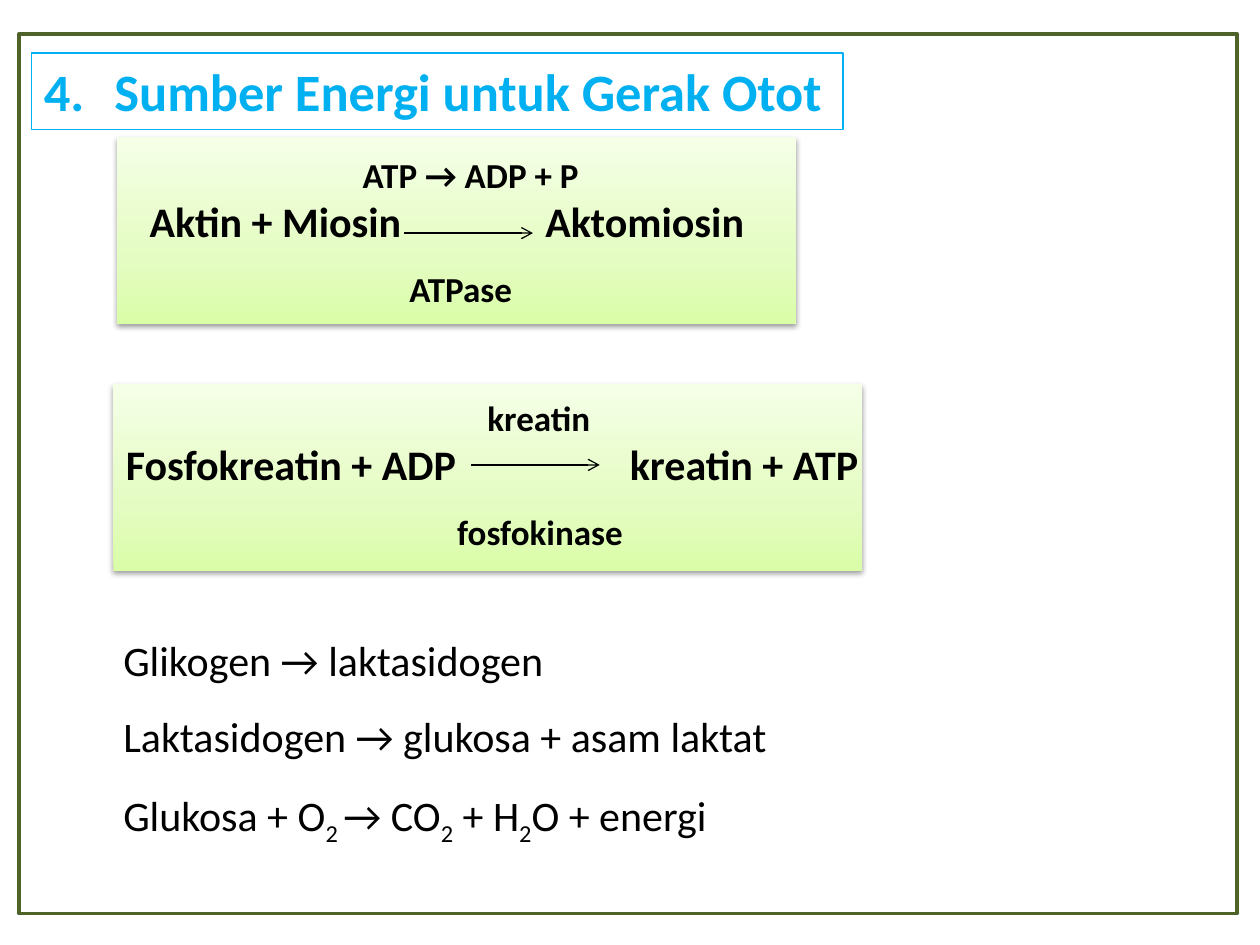
from pptx import Presentation
from pptx.dml.color import RGBColor
from pptx.enum.shapes import MSO_CONNECTOR as Connector, MSO_SHAPE as Shape
from pptx.enum.text import MSO_ANCHOR as Anchor, MSO_AUTO_SIZE as AutoSize, PP_ALIGN as Align
from pptx.oxml import parse_xml
from pptx.oxml.ns import nsdecls
from pptx.oxml.xmlchemy import OxmlElement
from pptx.util import Inches, Pt

FONT = "Calibri"
BLACK = RGBColor(0x00, 0x00, 0x00)
SKY = RGBColor(0x00, 0xB0, 0xF0)
OLIVE = RGBColor(0x4F, 0x62, 0x28)
LIME = RGBColor(0xDA, 0xFD, 0xA7)
PALE_LIME = RGBColor(0xE4, 0xFC, 0xC2)
MIST = RGBColor(0xF5, 0xFF, 0xE7)
PANEL_STOPS = [(0, LIME), (35, PALE_LIME), (100, MIST)]


def inches(*lengths):
    """Convert several numbers to lengths."""
    return [Inches(length) for length in lengths]


def add_element(parent, tag, **attributes):
    """Append a DrawingML element with the given attributes."""
    child = OxmlElement(tag)
    for name, value in attributes.items():
        child.set(name, str(value))
    parent.append(child)
    return child


def add_span(para, text, size=24, color=BLACK, bold=False, baseline=0):
    """Add formatted text to a paragraph."""
    span = para.add_run()
    span.text = text
    span.font.name = FONT
    span.font.size = Pt(size)
    span.font.bold = bold
    span.font.color.rgb = color
    if baseline:
        span.font._element.set("baseline", str(baseline * 1000))


def add_outline(shapes, box, color, width):
    """Add an unfilled rectangle with a coloured line."""
    outline = shapes.add_shape(Shape.RECTANGLE, *inches(*box))
    outline.shadow.inherit = False
    outline.fill.background()
    outline.line.color.rgb = color
    outline.line.width = Pt(width)
    return outline


def add_text_box(shapes, box):
    """Add an empty wrapping text box and return its frame."""
    frame = shapes.add_textbox(*inches(*box)).text_frame
    frame.word_wrap = True
    frame.auto_size = AutoSize.SHAPE_TO_FIT_TEXT
    return frame


def add_heading(shapes, box, text, number):
    """Add the numbered heading in its thin outline."""
    frame = add_outline(shapes, box, SKY, 0.75).text_frame
    frame.word_wrap = False
    frame.auto_size = AutoSize.SHAPE_TO_FIT_TEXT
    frame.vertical_anchor = Anchor.TOP
    para = frame.paragraphs[0]
    para.alignment = Align.LEFT
    properties = para._p.get_or_add_pPr()
    properties.set("marL", str(Inches(0.56)))
    properties.set("indent", str(-Inches(0.56)))
    add_element(properties, "a:buFont", typeface="+mj-lt")
    add_element(properties, "a:buAutoNum", type="arabicPeriod", startAt=number)
    add_span(para, text, size=30, color=SKY, bold=True)


def add_panel(shapes, box):
    """Add a shadowed rectangle with the green gradient."""
    panel = shapes.add_shape(Shape.RECTANGLE, *inches(*box))
    panel.line.fill.background()
    panel.fill.background()
    properties = panel._element.spPr
    stops = "".join(
        f'<a:gs pos="{place * 1000}"><a:srgbClr val="{color}"/></a:gs>'
        for place, color in PANEL_STOPS
    )
    gradient = parse_xml(
        f'<a:gradFill {nsdecls("a")} rotWithShape="1"><a:gsLst>{stops}</a:gsLst>'
        '<a:lin ang="16200000" scaled="0"/></a:gradFill>'
    )
    properties.replace(properties.find("{*}noFill"), gradient)
    panel.shadow.inherit = False
    shadow = add_element(
        properties.find("{*}effectLst"), "a:outerShdw", blurRad=Pt(3.1),
        dist=Pt(1.6), dir=5400000, rotWithShape=0,
    )
    color = add_element(shadow, "a:srgbClr", val=BLACK)
    add_element(color, "a:alpha", val=38000)


def add_arrow(shapes, left, top, length):
    """Add a thin horizontal reaction arrow."""
    arrow = shapes.add_connector(
        Connector.STRAIGHT, *inches(left, top, left + length, top)
    )
    arrow.line.color.rgb = BLACK
    arrow.line.width = Pt(0.75)
    add_element(arrow.line._get_or_add_ln(), "a:tailEnd", type="arrow")
    add_element(arrow._element.spPr, "a:effectLst")


def add_reaction(page, box, text_offset, text_width, lines, arrow_offset):
    """Add a reaction panel with tabbed lines and an arrow."""
    left, top, width, height = box
    group = page.shapes.add_group_shape().shapes
    add_panel(group, box)
    text_left, text_top = left + text_offset[0], top + text_offset[1]
    frame = add_text_box(group, (text_left, text_top, text_width, 1.29))
    for index, (text, tab, size, spacing) in enumerate(lines):
        para = frame.add_paragraph() if index else frame.paragraphs[0]
        tabs = add_element(para._p.get_or_add_pPr(), "a:tabLst")
        add_element(tabs, "a:tab", pos=Inches(tab), algn="l")
        para.line_spacing = spacing
        add_span(para, text, size=size, bold=True)
    add_arrow(group, left + arrow_offset[0], top + arrow_offset[1], 1.02)


def add_equations(shapes, box, equations):
    """Add the plain equations, with subscripts on every second part."""
    frame = add_text_box(shapes, box)
    for index, parts in enumerate(equations):
        para = frame.add_paragraph() if index else frame.paragraphs[0]
        para.line_spacing = 1.5
        for place, text in enumerate(parts):
            add_span(para, text, baseline=-25 if place % 2 else 0)


def main():
    """Build the slide and save the deck."""
    deck = Presentation()
    deck.slide_width, deck.slide_height = inches(10, 7.5)
    page = deck.slides.add_slide(deck.slide_layouts[6])
    add_outline(page.shapes, (0.15, 0.27, 9.67, 6.98), OLIVE, 2)
    add_heading(page.shapes, (0.25, 0.42, 6.44, 0.61), "Sumber Energi untuk Gerak Otot", 4)
    add_reaction(
        page, (0.93, 1.09, 5.39, 1.48), (0.16, 0.08), 5,
        [
            ("\tATP → ADP + P", 1.69, 20, 1),
            ("Aktin + Miosin\tAktomiosin", 3.14, 24, 1),
            ("\tATPase", 2.06, 20, 1.5),
        ],
        (2.28, 0.76),
    )
    add_reaction(
        page, (0.9, 3.05, 5.94, 1.48), (0, 0.05), 6.09,
        [
            ("\tkreatin", 2.87, 20, 1),
            ("Fosfokreatin + ADP\tkreatin + ATP", 4, 24, 1),
            ("\tfosfokinase", 2.63, 20, 1.5),
        ],
        (2.84, 0.64),
    )
    add_equations(
        page.shapes, (0.88, 4.79, 5.91, 1.92),
        [
            ["Glikogen → laktasidogen"],
            ["Laktasidogen → glukosa + asam laktat"],
            ["Glukosa + O", "2 ", "→ CO", "2", " + H", "2", "O + energi"],
        ],
    )
    deck.save("out.pptx")


if __name__ == "__main__":
    main()
